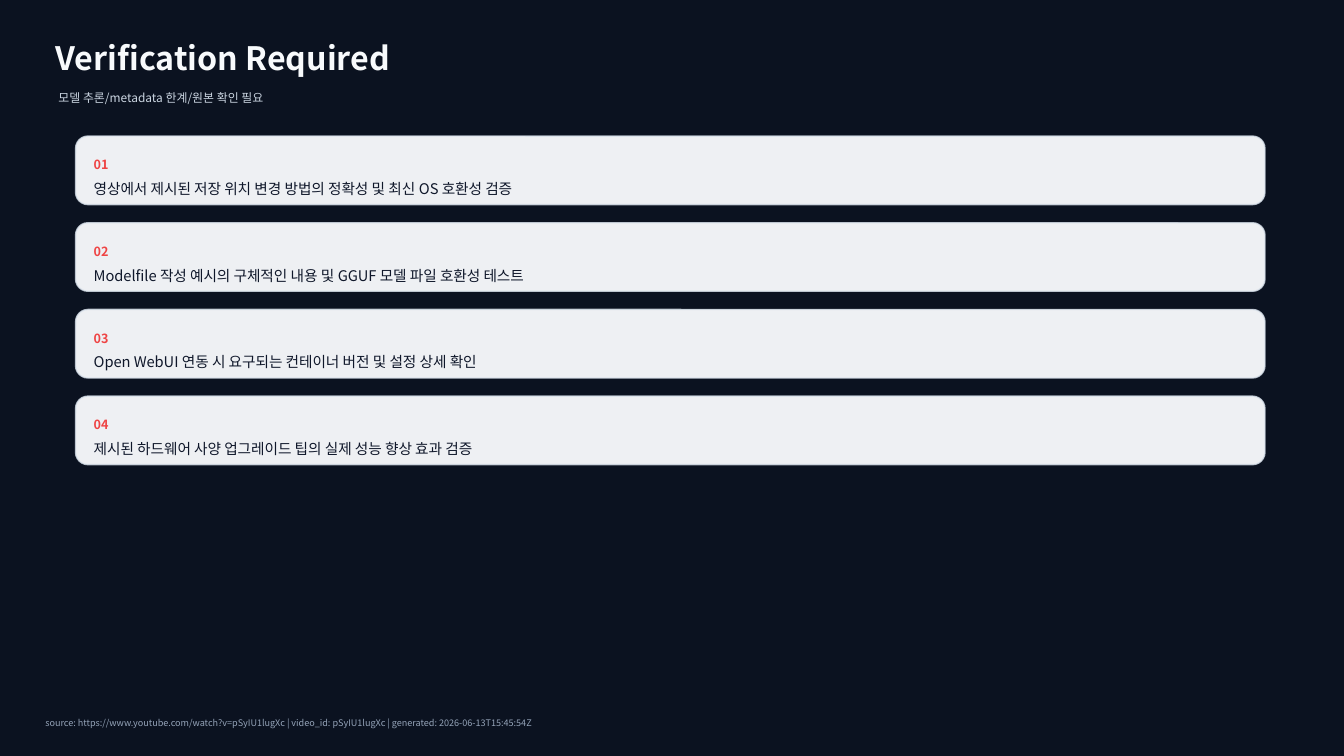
"""Build the dark "Verification Required" slide with its numbered cards."""
from dataclasses import dataclass

from lxml.etree import SubElement
from pptx import Presentation
from pptx.dml.color import RGBColor as RGB
from pptx.enum.shapes import MSO_SHAPE as SHAPE
from pptx.enum.text import MSO_ANCHOR as ANCHOR, MSO_AUTO_SIZE as AUTO, PP_ALIGN as ALIGN
from pptx.oxml.ns import qn
from pptx.util import Pt


@dataclass(frozen=True)
class Theme:
    font: str = "Noto Sans CJK KR"
    background: str = "0B1220"
    title: str = "F8FAFC"
    subtitle: str = "CBD5E1"
    card: str = "F8FAFC"
    border: str = "D7E0EA"
    number: str = "EF4444"
    item: str = "0F172A"
    footer: str = "94A3B8"
    title_size: float = 23
    subtitle_size: float = 8.5
    number_size: float = 9
    item_size: float = 10.5
    footer_size: float = 6.5


THEME = Theme()
CARD_LEFT, CARD_TOP, CARD_W, CARD_H, CARD_STEP = 54, 97.2, 849.6, 48.96, 61.92
CARD_PAD = 12.96
ITEMS = (
    "영상에서 제시된 저장 위치 변경 방법의 정확성 및 최신 OS 호환성 검증",
    "Modelfile 작성 예시의 구체적인 내용 및 GGUF 모델 파일 호환성 테스트",
    "Open WebUI 연동 시 요구되는 컨테이너 버전 및 설정 상세 확인",
    "제시된 하드웨어 사양 업그레이드 팁의 실제 성능 향상 효과 검증",
)


def write(sp, text, *, size, color, bold=False):
    tf = sp.text_frame
    tf.word_wrap, tf.auto_size, tf.vertical_anchor = True, AUTO.NONE, ANCHOR.MIDDLE
    tf.margin_left = tf.margin_top = tf.margin_right = tf.margin_bottom = 0
    p = tf.paragraphs[0]
    p.alignment = ALIGN.LEFT
    r = p.add_run()
    r.text = text
    r.font.name, r.font.size, r.font.bold = THEME.font, Pt(size), bold
    r.font.color.rgb = RGB.from_string(color)
    SubElement(r.font._element, qn("a:ea"), typeface=THEME.font)


def add_title(s, text, left, top, width, height):
    sp = s.shapes.title
    sp.left, sp.top, sp.width, sp.height = Pt(left), Pt(top), Pt(width), Pt(height)
    write(sp, text, size=THEME.title_size, color=THEME.title, bold=True)


def add_text(s, text, left, top, width, height, **fmt):
    write(s.shapes.add_textbox(Pt(left), Pt(top), Pt(width), Pt(height)), text, **fmt)


def paint(fill, color, opacity):
    fill.solid()
    fill.fore_color.rgb = RGB.from_string(color)
    for clr in fill._xPr.iter(qn("a:srgbClr")):
        if clr.getparent().getparent() is fill._xPr:
            SubElement(clr, qn("a:alpha"), val=str(opacity * 1000))


def add_card(s, number, text, top):
    sp = s.shapes.add_shape(SHAPE.ROUNDED_RECTANGLE, Pt(CARD_LEFT), Pt(top), Pt(CARD_W), Pt(CARD_H))
    sp.adjustments[0] = 0.18
    sp.shadow.inherit = False
    paint(sp.fill, THEME.card, 96)
    sp.line.width = Pt(1)
    paint(sp.line.fill, THEME.border, 80)
    left, width = CARD_LEFT + CARD_PAD, CARD_W - 2 * CARD_PAD
    add_text(s, f"{number:02d}", left, top + 11.52, width, 18,
             size=THEME.number_size, color=THEME.number, bold=True)
    add_text(s, text, left, top + 36, width, 2.88, size=THEME.item_size, color=THEME.item)


def main():
    prs = Presentation()
    prs.slide_width, prs.slide_height = Pt(960), Pt(540)
    s = prs.slides.add_slide(prs.slide_layouts.get_by_name("Title Only"))
    s.background.fill.solid()
    s.background.fill.fore_color.rgb = RGB.from_string(THEME.background)
    add_title(s, "Verification Required", 39.6, 25.2, 864, 32.4)
    add_text(s, "모델 추론/metadata 한계/원본 확인 필요", 41.76, 59.76, 828, 20.16,
             size=THEME.subtitle_size, color=THEME.subtitle)
    for i, text in enumerate(ITEMS):
        add_card(s, i + 1, text, CARD_TOP + i * CARD_STEP)
    add_text(s, "source: https://www.youtube.com/watch?v=pSyIU1lugXc | video_id: pSyIU1lugXc"
             " | generated: 2026-06-13T15:45:54Z", 32.4, 507.6, 892.8, 18,
             size=THEME.footer_size, color=THEME.footer)
    prs.save("out.pptx")


if __name__ == "__main__":
    main()
